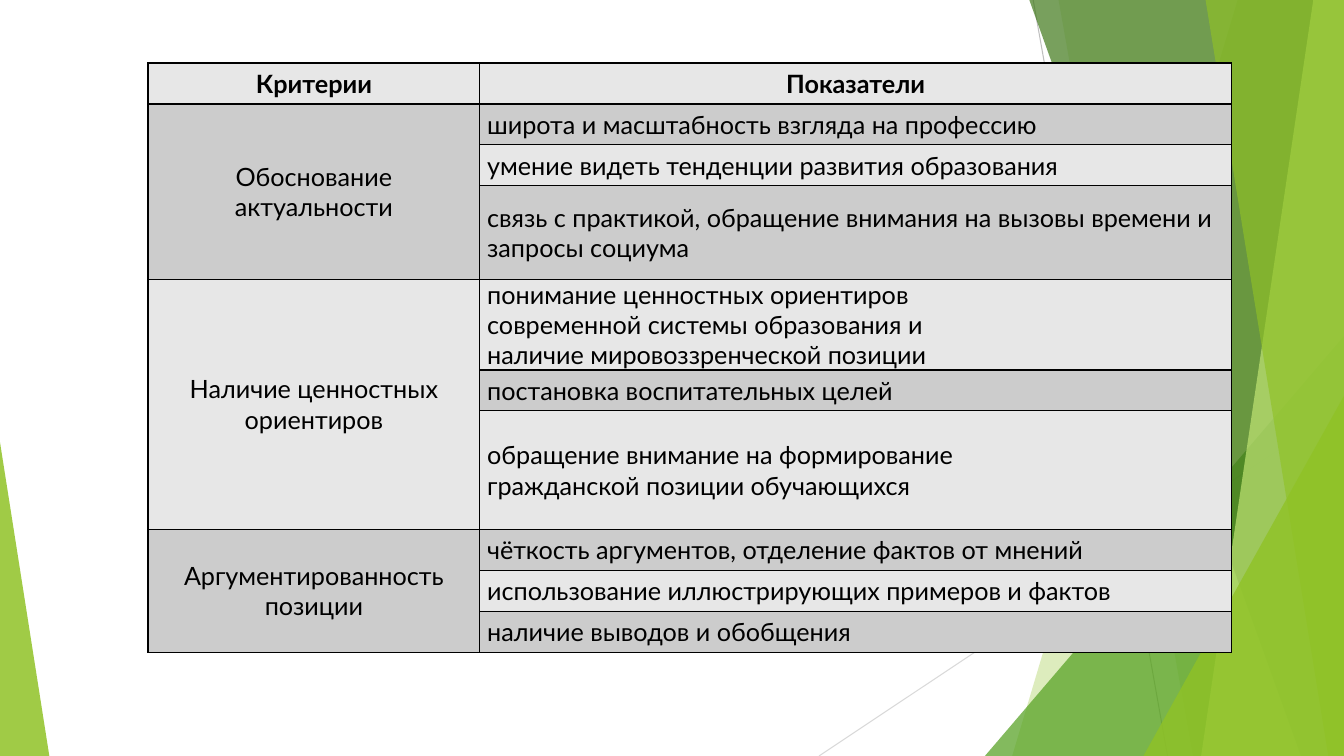
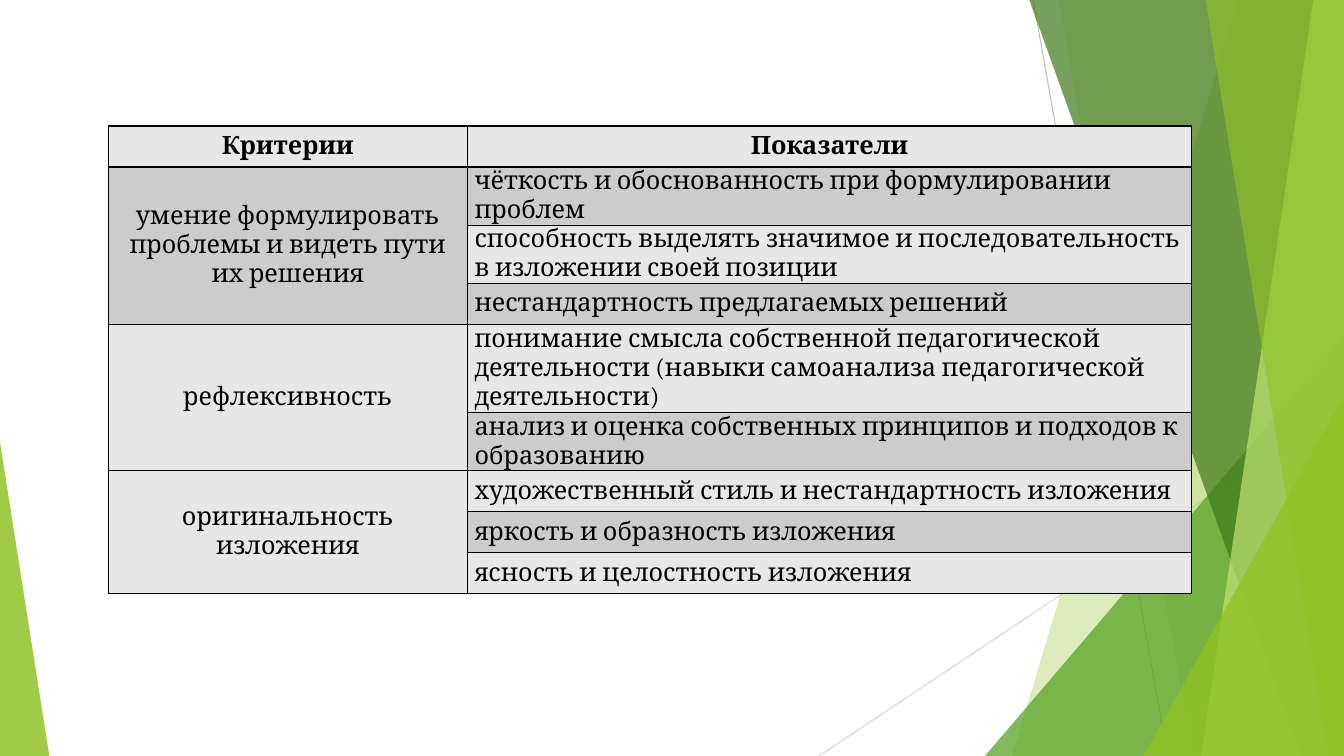
from lxml import etree
from pptx import Presentation
from pptx import util as u
from pptx.dml.color import RGBColor
from pptx.enum import shapes, text
from pptx.oxml import ns

PX = 9525  # EMU per px, 96 px to the inch
WIDTH, HEIGHT = 1280, 720

BLACK = RGBColor(0x00, 0x00, 0x00)
LIGHT = RGBColor(0xE7, 0xE7, 0xE7)
DARK = RGBColor(0xCC, 0xCC, 0xCC)
GREY = RGBColor(0xBF, 0xBF, 0xBF)
PALE_GREY = RGBColor(0xD9, 0xD9, 0xD9)
LIME = RGBColor(0x90, 0xC2, 0x26)
GREEN = RGBColor(0x54, 0xA0, 0x21)
FOREST = RGBColor(0x3F, 0x78, 0x19)
PALE_LIME = RGBColor(0xC0, 0xE4, 0x74)

# Table content: each criterion with its indicators; a newline starts a paragraph
HEADINGS = ("Критерии", "Показатели")
ONE, TWO, THREE = 39, 55, 84  # row heights by number of lines
TABLES = [
    dict(font="Lato", left=141, top=60, columns=(316, 716), groups=[
        ("Обоснование актуальности", [
            (ONE, "широта и масштабность взгляда на профессию"),
            (ONE, "умение видеть тенденции развития образования"),
            (89, "связь с практикой, обращение внимания на вызовы времени и запросы социума")]),
        ("Наличие ценностных ориентиров", [
            (86, "понимание ценностных ориентиров\nсовременной системы образования и\n"
                 "наличие мировоззренческой позиции"),
            (ONE, "постановка воспитательных целей"),
            (113, "обращение внимание на формирование\nгражданской позиции обучающихся")]),
        ("Аргументированность позиции", [
            (ONE, "чёткость аргументов, отделение фактов от мнений"),
            (ONE, "использование иллюстрирующих примеров и фактов"),
            (ONE, "наличие выводов и обобщения")]),
    ]),
    dict(font="Cambria", left=103, top=120, columns=(342, 690), groups=[
        ("умение формулировать проблемы и видеть пути их решения", [
            (TWO, "чёткость и обоснованность при формулировании проблем"),
            (TWO, "способность выделять значимое и последовательность в изложении своей позиции"),
            (ONE, "нестандартность предлагаемых решений")]),
        ("рефлексивность", [
            (THREE, "понимание смысла собственной педагогической деятельности "
                    "(навыки самоанализа педагогической деятельности)"),
            (TWO, "анализ и оценка собственных принципов и подходов к образованию")]),
        ("оригинальность\nизложения", [
            (ONE, "художественный стиль и нестандартность изложения"),
            (ONE, "яркость и образность изложения"),
            (ONE, "ясность и целостность изложения")]),
    ]),
]

# Backdrop shared by the slides, from back to front
LINES = [((984, 0), (1112, HEIGHT), GREY), ((WIDTH, 387), (780, HEIGHT), PALE_GREY)]
# Bands run to the right edge: left x at the top, left x at the bottom
# Triangles: left, top, width, place of the apex
FACETS = [
    ("band", (1179, 964), LIME, 30),
    ("band", (1008, 1136), LIME, 20),
    ("triangle", (938, 320, 342, 1), GREEN, 72),
    ("band", (980, 1239), FOREST, 70),
    ("band", (1251, 1144), PALE_LIME, 70),
    ("band", (1148, 1265), LIME, 65),
    ("triangle", (1089, 377, 191, 1), LIME, 80),
    ("triangle", (0, 421, 47, 0), LIME, 85),
]


def px(*lengths):
    return [u.Emu(length * PX) for length in lengths]


def add_band(page, top_x, bottom_x):
    outline = page.shapes.build_freeform(top_x, -1, scale=PX)
    outline.add_line_segments([(WIDTH, -1), (WIDTH, HEIGHT), (bottom_x, HEIGHT)])
    return outline.convert_to_shape()


def add_triangle(page, left, top, width, apex):
    shape = page.shapes.add_shape(shapes.MSO_SHAPE.ISOSCELES_TRIANGLE,
                                  *px(left, top, width, HEIGHT - top))
    shape.adjustments[0] = apex
    return shape


def add_backdrop(page):
    for start, end, color in LINES:
        line = page.shapes.add_connector(shapes.MSO_CONNECTOR.STRAIGHT, *px(*start, *end))
        line.line.color.rgb = color
        line.line.width = u.Pt(0.75)
        etree.SubElement(line._element.spPr, ns.qn("a:effectLst"))
    builders = dict(band=add_band, triangle=add_triangle)
    for kind, geometry, color, opacity in FACETS:
        shape = builders[kind](page, *geometry)
        shape.shadow.inherit = False
        shape.line.fill.background()
        shape.fill.solid()
        shape.fill.fore_color.rgb = color
        tint = shape._element.spPr.find(".//" + ns.qn("a:srgbClr"))
        etree.SubElement(tint, ns.qn("a:alpha"), val=str(opacity * 1000))


def add_borders(cell):
    properties = cell._tc.get_or_add_tcPr()
    for side in ("lnL", "lnR", "lnT", "lnB"):
        border = etree.SubElement(properties, ns.qn("a:" + side), w=str(u.Pt(1)))
        fill = etree.SubElement(border, ns.qn("a:solidFill"))
        etree.SubElement(fill, ns.qn("a:srgbClr"), val=str(BLACK))


def fill_cell(cell, words, color, font, bold, centred):
    add_borders(cell)
    cell.fill.solid()
    cell.fill.fore_color.rgb = color
    cell.vertical_anchor = text.MSO_ANCHOR.MIDDLE
    if not centred:
        margins = dict(margin_left=7, margin_right=7, margin_top=0, margin_bottom=0)
        for name, length in margins.items():
            setattr(cell, name, u.Emu(length * PX))
    cell.text_frame.text = words
    style = dict(name=font, size=u.Pt(18), bold=bold)
    for para in cell.text_frame.paragraphs:
        para.alignment = text.PP_ALIGN.CENTER if centred else text.PP_ALIGN.LEFT
        for span in para.runs:
            for name, value in style.items():
                setattr(span.font, name, value)
            span.font.color.rgb = BLACK


def add_criteria_table(page, font, left, top, columns, groups):
    rows = [(ONE, *HEADINGS)]
    merges = []
    for criterion, indicators in groups:
        merges.append((len(rows), len(rows) + len(indicators) - 1))
        for index, (height, indicator) in enumerate(indicators):
            rows.append((height, "" if index else criterion, indicator))

    total = sum(row[0] for row in rows)
    table = page.shapes.add_table(len(rows), len(columns),
                                  *px(left, top, sum(columns), total)).table
    for column, width in zip(table.columns, columns):
        column.width = u.Emu(width * PX)
    group_starts = {row: first for first, last in merges for row in range(first, last + 1)}
    for index, (height, *words) in enumerate(rows):
        table.rows[index].height = u.Emu(height * PX)
        for side, content in enumerate(words):
            # Criteria take the shade of their group's first row
            shade_row = index if side else group_starts.get(index, index)
            fill_cell(table.cell(index, side), content, DARK if shade_row % 2 else LIGHT,
                      font, bold=index == 0, centred=index == 0 or side == 0)
    for first, last in merges:
        table.cell(first, 0).merge(table.cell(last, 0))


def main():
    deck = Presentation()
    deck.slide_width, deck.slide_height = px(WIDTH, HEIGHT)
    blank = deck.slide_layouts[6]
    for content in TABLES:
        page = deck.slides.add_slide(blank)
        add_backdrop(page)
        add_criteria_table(page, **content)
    deck.save("out.pptx")


if __name__ == "__main__":
    main()
